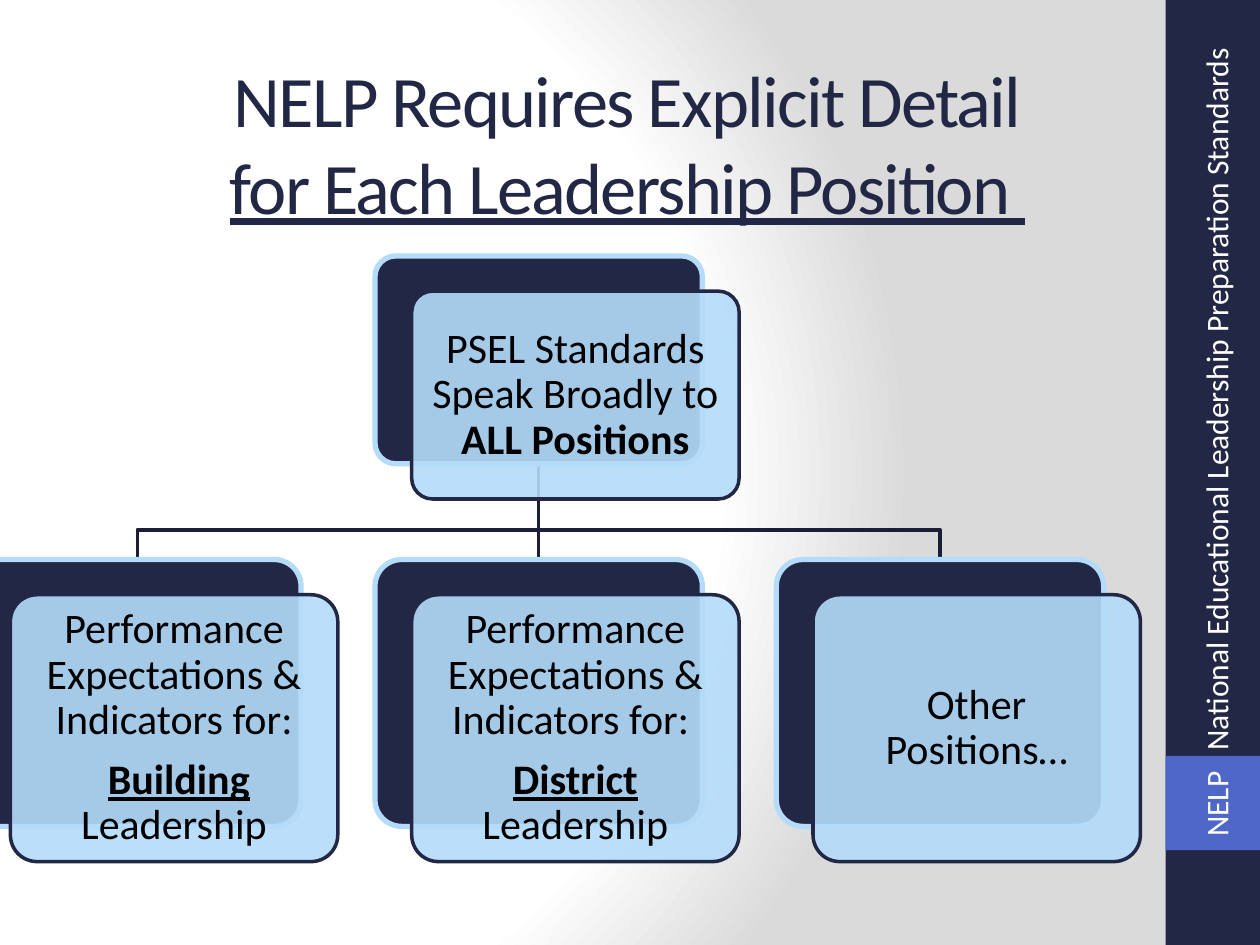
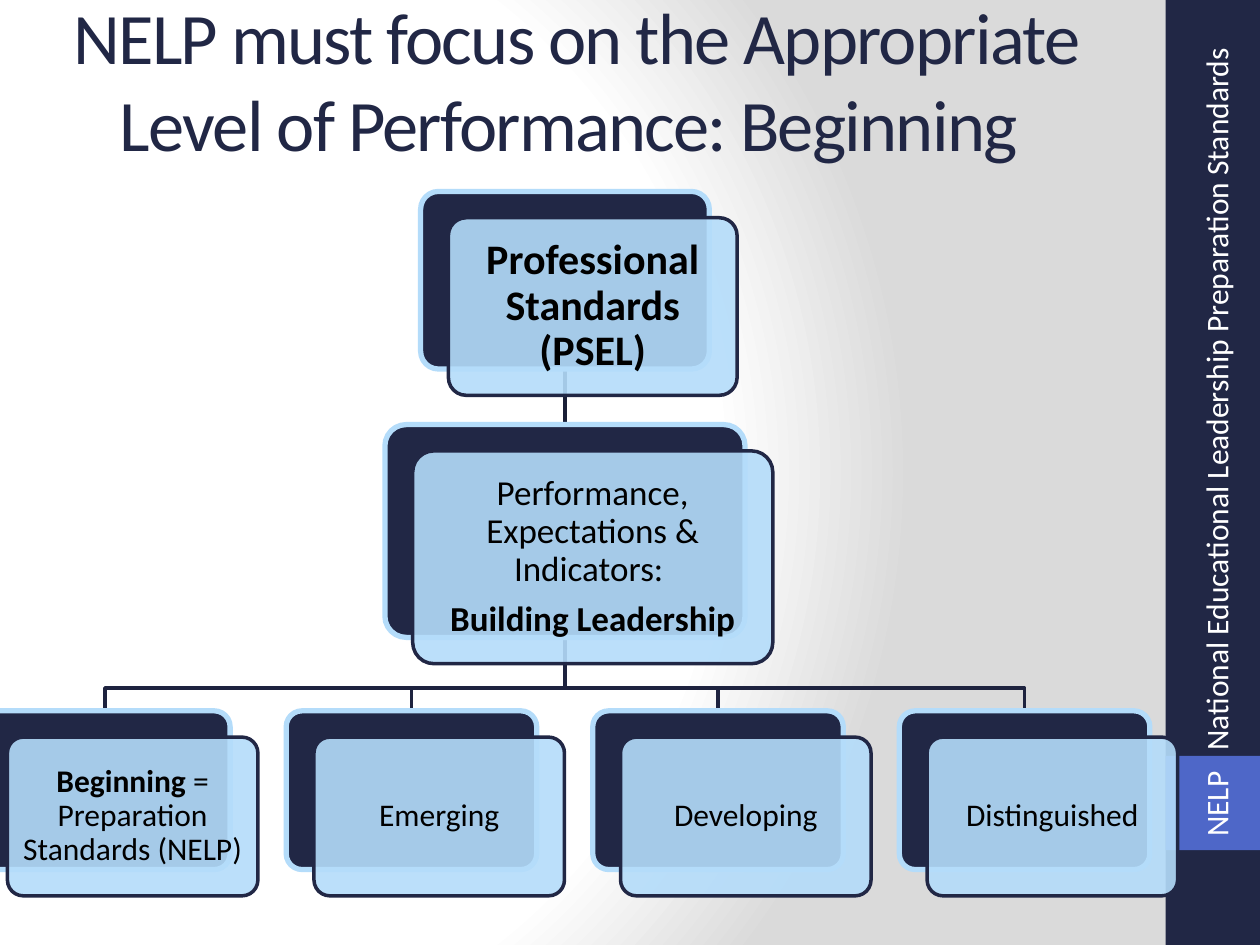
"""Build two slides on how leadership standards branch into levels."""
from dataclasses import dataclass

import lxml.etree
import pptx
import pptx.dml.color
import pptx.enum.shapes
import pptx.enum.text
import pptx.oxml
import pptx.oxml.ns
import pptx.util

Cm = pptx.util.Cm
Pt = pptx.util.Pt
qn = pptx.oxml.ns.qn
FORM = pptx.enum.shapes.MSO_SHAPE
ALIGN = pptx.enum.text.PP_ALIGN
ANCHOR = pptx.enum.text.MSO_ANCHOR

FONT = "Calibri"
WIDE, HIGH = 25.4, 19.05
BAR = 1.9
BEND = 0.69
HUE = {
    "navy": "212745", "blue": "4E67C8", "sky": "B4DCFA", "black": "000000",
    "white": "FFFFFF", "gray": "DADADA", "stem": "1A1F37", "twig": "1E233F",
}

Lines = list[list[tuple[str, str]]]


@dataclass
class Card:
    x: float
    y: float
    w: float
    h: float
    lines: Lines
    size: float = 24

    @property
    def mid(self) -> float:
        return self.x + self.w / 2


@dataclass
class Shift:
    x: float
    y: float


def tint(name: str) -> pptx.dml.color.RGBColor:
    return pptx.dml.color.RGBColor.from_string(HUE[name])


def write(shape, lines: Lines, *, size: float, color: str, align=ALIGN.CENTER,
          anchor=ANCHOR.MIDDLE, inset: tuple[float, float] = (0.25, 0.13),
          lead: float = 1, after: float = 0, track: int = 0) -> None:
    frame = shape.text_frame
    frame.word_wrap = True
    frame.vertical_anchor = anchor
    frame.margin_left = frame.margin_right = Cm(inset[0])
    frame.margin_top = frame.margin_bottom = Cm(inset[1])
    for row, parts in enumerate(lines):
        para = frame.add_paragraph() if row else frame.paragraphs[0]
        para.alignment = align
        para.line_spacing = lead
        para.space_after = Pt(after)
        for text, style in parts:
            if text == "\n":
                para.add_line_break()
                continue
            run = para.add_run()
            run.text = text
            font = run.font
            font.name = FONT
            font.size = Pt(size)
            font.color.rgb = tint(color)
            font.bold = "b" in style
            font.underline = "u" in style
            if track:
                run._r.get_or_add_rPr().set("spc", str(track))


def block(slide, form, x: float, y: float, w: float, h: float, fill: str,
          edge: str = "", weight: float = 0):
    shape = slide.shapes.add_shape(form, Cm(x), Cm(y), Cm(w), Cm(h))
    shape.shadow.inherit = False
    shape.fill.solid()
    shape.fill.fore_color.rgb = tint(fill)
    if edge:
        shape.line.color.rgb = tint(edge)
        shape.line.width = Pt(weight)
    else:
        shape.line.fill.background()
    return shape


def draw_card(slide, card: Card, shift: Shift) -> None:
    back = block(slide, FORM.ROUNDED_RECTANGLE, card.x, card.y, card.w, card.h,
                 "navy", "sky", 3)
    front = block(slide, FORM.ROUNDED_RECTANGLE, card.x + shift.x,
                  card.y + shift.y, card.w, card.h, "sky", "navy", 2)
    for shape in (back, front):
        shape.adjustments[0] = 0.1
    shade = front._element.spPr.find(".//" + qn("a:srgbClr"))
    lxml.etree.SubElement(shade, qn("a:alpha"), val="90000")
    gap = round(card.size * 0.0106, 2)
    write(front, card.lines, size=card.size, color="black", inset=(gap, gap),
          lead=0.9, after=card.size * 0.35)


def link(slide, top: Card, low: Card, color: str) -> None:
    start = top.y + top.h
    if abs(top.mid - low.mid) < 0.05:
        line = slide.shapes.add_connector(
            pptx.enum.shapes.MSO_CONNECTOR.STRAIGHT,
            Cm(top.mid), Cm(start), Cm(top.mid), Cm(low.y))
        lxml.etree.SubElement(line._element.spPr, qn("a:effectLst"))
    else:
        turn = start + (low.y - start) * BEND
        pen = slide.shapes.build_freeform(Cm(top.mid), Cm(start))
        pen.add_line_segments([(Cm(top.mid), Cm(turn)), (Cm(low.mid), Cm(turn)),
                               (Cm(low.mid), Cm(low.y))], close=False)
        line = pen.convert_to_shape()
        line.shadow.inherit = False
        line.fill.background()
    line.line.color.rgb = tint(color)
    line.line.width = Pt(2)


def draw_tree(slide, levels: list[list[Card]], shift: Shift) -> None:
    for depth in reversed(range(len(levels) - 1)):
        for low in levels[depth + 1]:
            link(slide, levels[depth][0], low, "twig" if depth else "stem")
    for level in levels:
        for card in level:
            draw_card(slide, card, shift)


def make_row(x: float, step: float, y: float, w: float, h: float,
             texts: list[Lines], size: float) -> list[Card]:
    return [Card(x + i * step, y, w, h, lines, size)
            for i, lines in enumerate(texts)]


def paint_back(slide) -> None:
    stops = "".join(
        f'<a:gs pos="{pos}"><a:srgbClr val="{HUE[name]}"/></a:gs>'
        for pos, name in ((0, "white"), (75000, "white"), (100000, "gray")))
    slide._element.cSld.insert(0, pptx.oxml.parse_xml(
        f'<p:bg {pptx.oxml.ns.nsdecls("p", "a")}><p:bgPr>'
        f'<a:gradFill rotWithShape="1"><a:gsLst>{stops}</a:gsLst>'
        '<a:path path="circle">'
        '<a:fillToRect l="20000" t="50000" r="100000" b="50000"/></a:path>'
        '</a:gradFill><a:effectLst/></p:bgPr></p:bg>'))


def add_box(slide, x: float, y: float, w: float, h: float):
    return slide.shapes.add_textbox(Cm(x), Cm(y), Cm(w), Cm(h))


def add_label(slide) -> None:
    label = add_box(slide, 23.88, 0.1, 1.27, 16.9)
    write(label, [[("NELP\tNational Educational Leadership Preparation Standards", "")]],
          size=18, color="white", align=ALIGN.LEFT, anchor=ANCHOR.TOP)
    label.text_frame._txBody.bodyPr.set("vert", "vert270")
    props = label.text_frame.paragraphs[0]._p.get_or_add_pPr()
    tabs = lxml.etree.SubElement(props, qn("a:tabLst"))
    lxml.etree.SubElement(tabs, qn("a:tab"), pos=str(Cm(1.74)), algn="l")


def add_page(deck, title: list[tuple[str, str]], x: float, y: float, w: float,
             levels: list[list[Card]], shift: Shift) -> None:
    slide = deck.slides.add_slide(deck.slide_layouts[6])
    paint_back(slide)
    block(slide, FORM.RECTANGLE, WIDE - BAR, 0, BAR, HIGH, "navy")
    block(slide, FORM.RECTANGLE, WIDE - BAR, 15.24, BAR, BAR, "blue")
    write(add_box(slide, x, y, w, 3.18), [title], size=41.4, color="navy",
          track=-100)
    draw_tree(slide, levels, shift)
    add_label(slide)


def main() -> None:
    deck = pptx.Presentation()
    deck.slide_width, deck.slide_height = Cm(WIDE), Cm(HIGH)

    broad = Card(7.56, 5.16, 6.6, 4.19, [
        [("PSEL Standards Speak Broadly to ", ""), ("ALL Positions", "b")]])
    posts = make_row(-0.53, 8.09, 11.28, 6.6, 5.38, [
        [[("Performance Expectations & Indicators for:", "")],
         [(" ", ""), ("Building", "bu"), (" Leadership", "")]],
        [[("Performance Expectations & Indicators for: ", "")],
         [("District", "bu"), (" Leadership", "")]],
        [[("Other Positions…", "")]],
    ], 24)
    add_page(deck, [("NELP Requires Explicit Detail", ""), ("\n", ""),
                    ("for Each Leadership Position ", "u")],
             2.9, 1.27, 19.5, [[broad], posts], Shift(0.74, 0.71))

    base = Card(8.48, 3.86, 5.82, 3.58,
                [[("Professional Standards (PSEL)", "b")]])
    build = Card(7.76, 8.56, 7.26, 4.29, [
        [("Performance, Expectations & Indicators: ", "")],
        [("Building Leadership", "b")]], 20)
    grades = make_row(-0.41, 6.18, 14.33, 5.05, 3.2, [
        [[("Beginning", "b"), (" = Preparation Standards (NELP)", "")]],
        *([[(name, "")]] for name in ("Emerging", "Developing", "Distinguished")),
    ], 18)
    add_page(deck, [("NELP must focus on the Appropriate Level of Performance: "
                     "Beginning ", "")],
             0, 0, 23.22, [[base], [build], grades], Shift(0.56, 0.53))

    deck.save("out.pptx")


if __name__ == "__main__":
    main()
